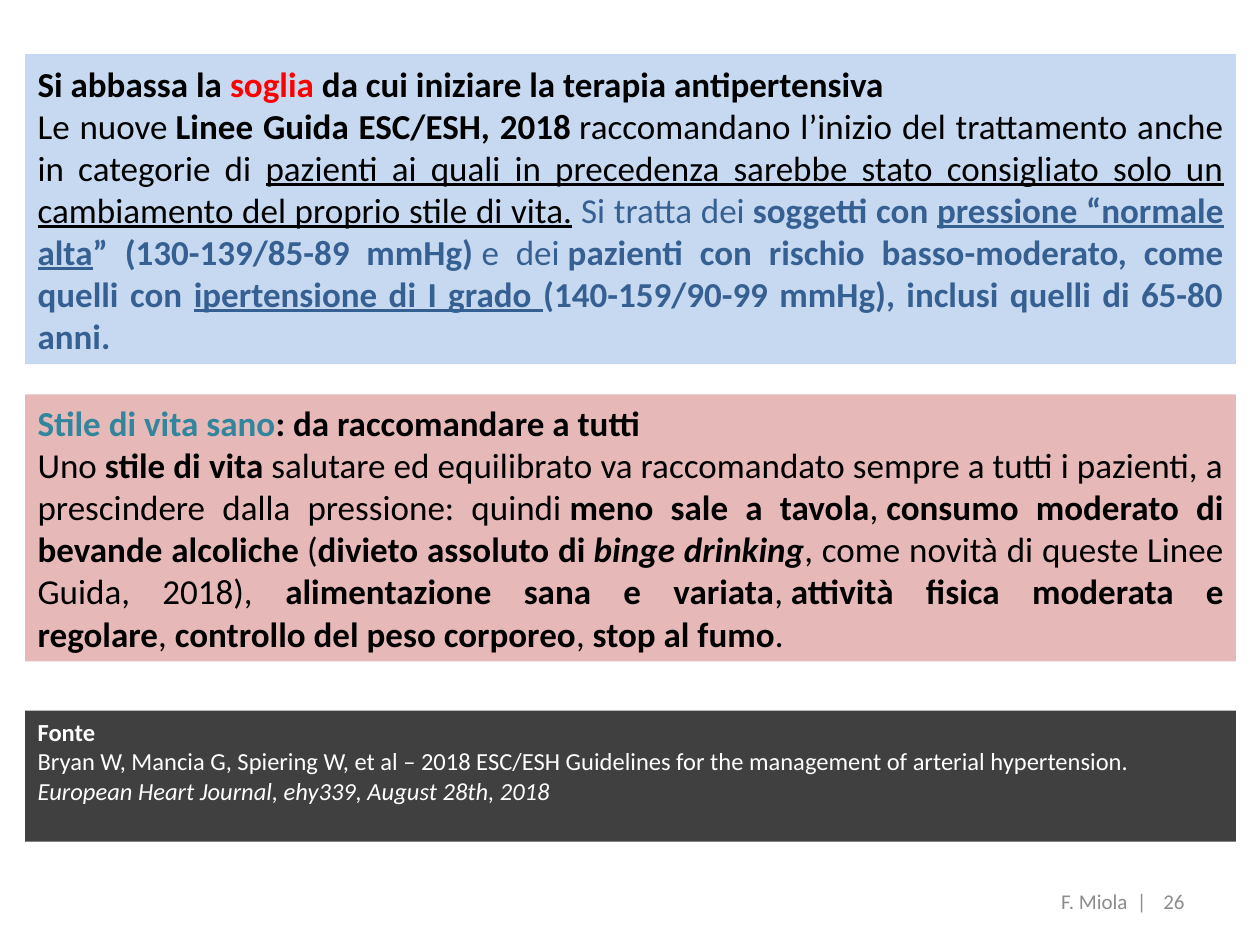
from pptx import Presentation
from pptx.dml.color import RGBColor
from pptx.enum.shapes import MSO_SHAPE
from pptx.enum.text import MSO_ANCHOR as Anchor, PP_ALIGN as Align
from pptx.util import Inches, Pt

BLACK = RGBColor(0x00, 0x00, 0x00)
WHITE = RGBColor(0xFF, 0xFF, 0xFF)
RED = RGBColor(0xFF, 0x00, 0x00)
NAVY = RGBColor(0x37, 0x60, 0x92)
TEAL = RGBColor(0x31, 0x85, 0x9C)
GREY = RGBColor(0x8C, 0x8C, 0x8C)
PALE_BLUE = RGBColor(0xC6, 0xD9, 0xF1)
PALE_RED = RGBColor(0xE6, 0xB9, 0xB8)
CHARCOAL = RGBColor(0x40, 0x40, 0x40)

HARD_SPACE = chr(160)  # written as ~ in the wording below
BOLD = {"bold": True}
BOLD_NAVY = {"bold": True, "color": NAVY}
LINKED_NAVY = {"bold": True, "underline": True, "color": NAVY}

THRESHOLD = [
    [("Si abbassa la", BOLD),
     (" soglia ", {"bold": True, "color": RED}),
     ("da cui iniziare la terapia antipertensiva", BOLD)],
    [("Le nuove~", {}),
     ("Linee Guida ESC/ESH, 2018", BOLD),
     ("~raccomandano l’inizio del trattamento anche in categorie di ", {}),
     ("pazienti ai quali in precedenza sarebbe stato consigliato solo un "
      "cambiamento del proprio stile di vita.", {"underline": True}),
     (" ", {}),
     ("Si tratta dei~", {"color": NAVY}),
     ("soggetti con ", BOLD_NAVY),
     ("pressione “normale alta", LINKED_NAVY),
     ("” (130-139/85-89 mmHg)", BOLD_NAVY),
     ("~e dei~", {"color": NAVY}),
     ("pazienti con rischio basso-moderato, come quelli con ", BOLD_NAVY),
     ("ipertensione di I grado ", LINKED_NAVY),
     ("(140-159/90-99 mmHg), inclusi quelli di 65-80 anni.~", BOLD_NAVY)],
]
LIFESTYLE = [
    [("Stile di vita sano", {"bold": True, "color": TEAL}),
     (": da raccomandare a tutti", BOLD)],
    [("Uno~", {}),
     ("stile di vita~", BOLD),
     ("salutare ed equilibrato va raccomandato sempre a tutti i pazienti, "
      "a prescindere dalla pressione: quindi~", {}),
     ("meno sale a tavola", BOLD),
     (",~", {}),
     ("consumo moderato di bevande alcoliche", BOLD),
     ("~(", {}),
     ("divieto assoluto di~", BOLD),
     ("binge drinking", {"bold": True, "italic": True}),
     (", come novità di queste Linee Guida, 2018), ", {}),
     ("alimentazione sana e variata", BOLD),
     (",~", {}),
     ("attività fisica moderata e regolare", BOLD),
     (",~", {}),
     ("controllo del peso corporeo", BOLD),
     (",~", {}),
     ("stop al fumo", BOLD),
     (".", {})],
]
SOURCE = [
    [("Fonte", BOLD)],
    [("Bryan W, Mancia G, Spiering W, et al –~2018 ESC/ESH Guidelines for "
      "the management of arterial hypertension.~", {})],
    [("European Heart Journal, ehy339, August 28th, 2018", {"italic": True})],
]


def add_run(paragraph, text, size, color=BLACK, bold=False, italic=False,
            underline=False):
    run = paragraph.add_run()
    run.text = text.replace("~", HARD_SPACE)
    font = run.font
    font.name, font.size = "Calibri", Pt(size)
    font.bold, font.italic, font.underline = bold, italic, underline
    font.color.rgb = color


class SlideBuilder:
    """Holds the current slide and the panel geometry."""

    panel_left, panel_width = 0.2, 9.61

    def __init__(self, slide):
        self.slide = slide

    def set_text(self, shape, paragraphs, align, anchor, **base):
        """Fill a shape with paragraphs of (text, format) pairs."""
        frame = shape.text_frame
        frame.word_wrap = True
        frame.vertical_anchor = anchor
        for index, pieces in enumerate(paragraphs):
            paragraph = frame.add_paragraph() if index else frame.paragraphs[0]
            paragraph.alignment = align
            for text, style in pieces:
                add_run(paragraph, text, **{**base, **style})

    def panel(self, top, height, fill, paragraphs, align=Align.JUSTIFY,
              anchor=Anchor.MIDDLE, **base):
        shape = self.slide.shapes.add_shape(
            MSO_SHAPE.RECTANGLE, Inches(self.panel_left), Inches(top),
            Inches(self.panel_width), Inches(height))
        shape.shadow.inherit = False
        shape.fill.solid()
        shape.fill.fore_color.rgb = fill
        shape.line.fill.background()
        self.set_text(shape, paragraphs, align, anchor, **base)

    def footer(self, left, width, text):
        box = self.slide.shapes.add_textbox(
            Inches(left), Inches(6.95), Inches(width), Inches(0.4))
        self.set_text(box, [[(text, {})]], Align.RIGHT, Anchor.MIDDLE,
                      size=12, color=GREY)


def main():
    deck = Presentation()
    deck.slide_width, deck.slide_height = Inches(10), Inches(7.5)
    builder = SlideBuilder(deck.slides.add_slide(deck.slide_layouts[6]))
    builder.panel(0.43, 2.46, PALE_BLUE, THRESHOLD, size=20)
    builder.panel(3.13, 2.12, PALE_RED, LIFESTYLE, size=20)
    builder.panel(5.64, 1.04, CHARCOAL, SOURCE, align=Align.LEFT,
                  anchor=Anchor.TOP, size=14, color=WHITE)
    builder.footer(7.17, 2.33, "26")
    builder.footer(8.24, 0.96, "F. Miola  |")
    deck.save("out.pptx")


if __name__ == "__main__":
    main()
